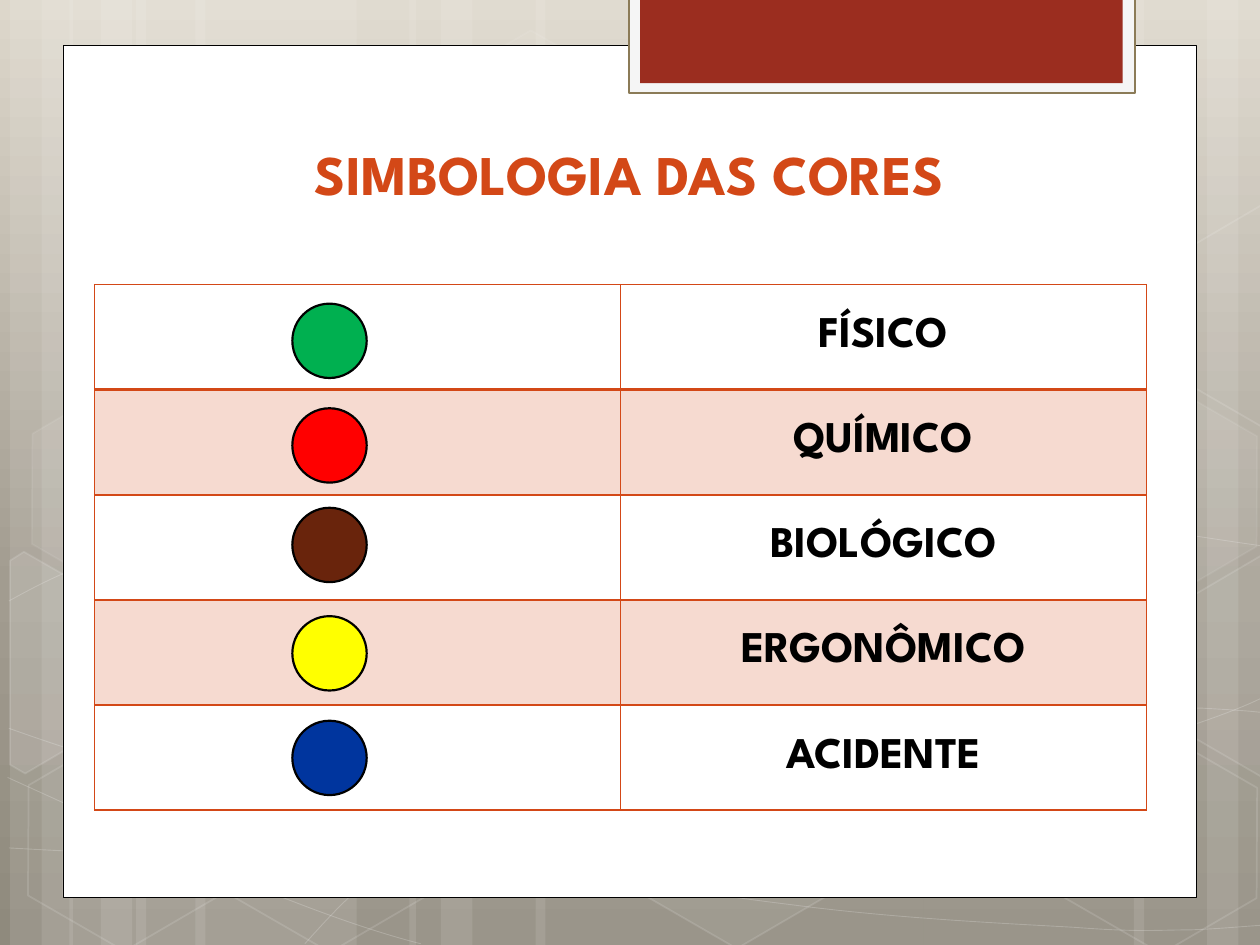
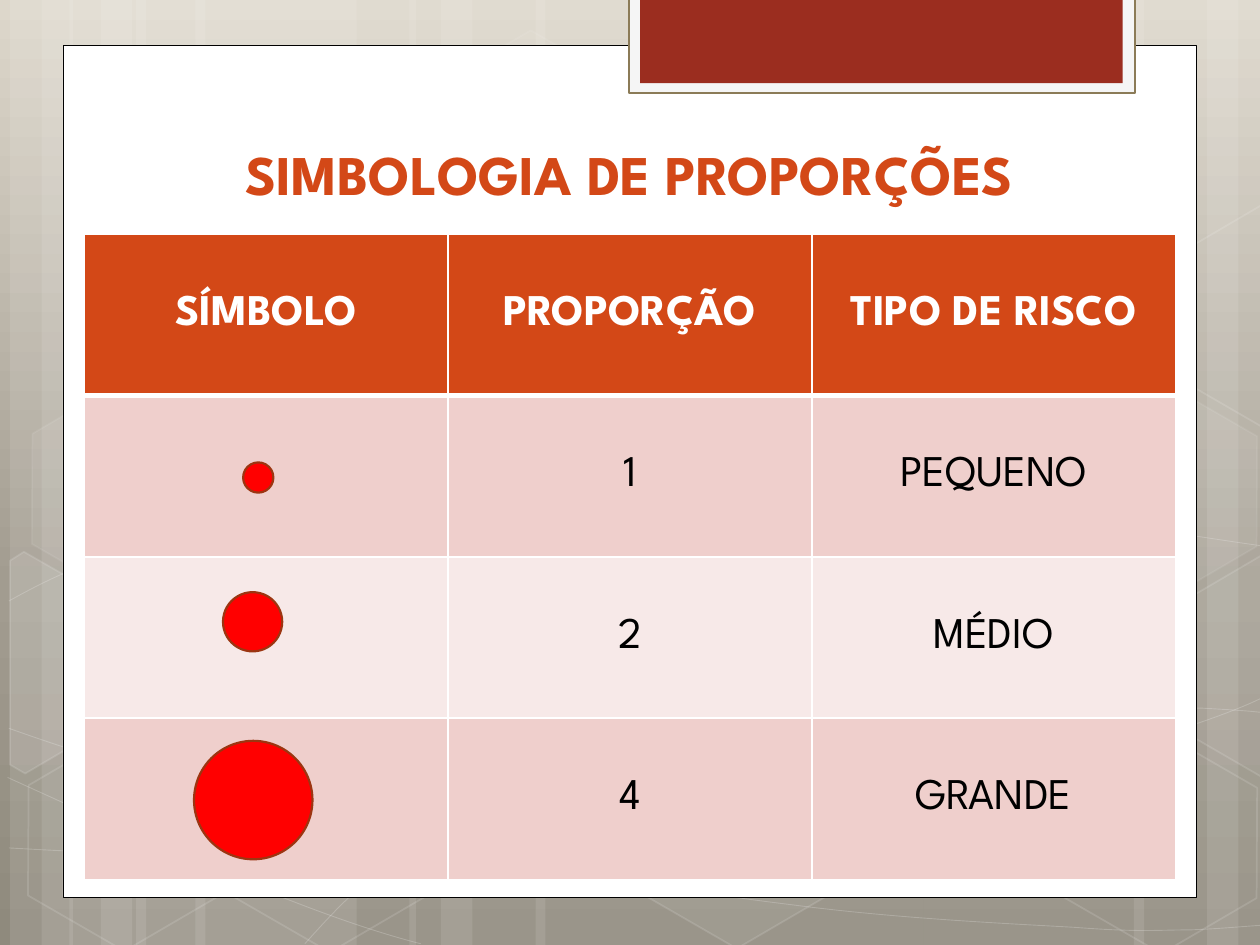
from dataclasses import dataclass
from typing import NamedTuple

from lxml import etree
from pptx import Presentation
from pptx.dml.color import RGBColor
from pptx.enum.shapes import MSO_SHAPE
from pptx.enum.text import MSO_ANCHOR, PP_ALIGN
from pptx.oxml import parse_xml
from pptx.oxml.ns import nsdecls, qn
from pptx.util import Inches, Pt

RECT, OVAL, HEXAGON = MSO_SHAPE.RECTANGLE, MSO_SHAPE.OVAL, MSO_SHAPE.HEXAGON
MIDDLE, BOTTOM = MSO_ANCHOR.MIDDLE, MSO_ANCHOR.BOTTOM
CENTER = PP_ALIGN.CENTER

FONT = "League Spartan"
COLORS = {
    "white": "FFFFFF", "black": "000000", "accent": "D34817",
    "tab": "9B2D1F", "tab_frame": "F5F5F5", "tab_edge": "8B7B57",
    "green": "00B050", "red": "FF0000", "brown": "69240C",
    "yellow": "FFFF00", "blue": "00359E", "dot_edge": "9C3511",
    "band_dark": "EFCFCC", "band_light": "F7E9E8",
}
BACKGROUND_STOPS = [(0, "DDD7CB"), (62, "A29C90"), (100, "8F8A7D")]

Point = tuple[float, float]


class Paint(NamedTuple):
    color: str
    alpha: int = 100


class Stroke(NamedTuple):
    color: str
    width: float
    alpha: int = 100


class Hexagon(NamedTuple):
    left: float
    top: float
    fill_alpha: int
    line_alpha: int


class Fragment(NamedTuple):
    """A hexagon cut off by the slide edge."""
    points: list[Point]
    fill_alpha: int


class Dot(NamedTuple):
    left: float
    top: float
    diameter: float
    color: str


@dataclass
class Grid:
    left: float
    top: float
    width: float
    height: float
    rows: list[list[str]]
    fills: list[Paint | None]
    border: str
    header_rule: float
    header_color: str
    bold_body: bool


# left, width
STRIPES = [(1.08, 1.75), (0.08, 0.5), (0.33, 0.83), (1.55, 1.75), (0.55, 0.5),
           (0.8, 0.83), (7.33, 1.75), (9.58, 0.5), (9, 0.83), (4.25, 3.08),
           (3.25, 0.5), (3.5, 0.83)]

# Each curve: a start point, then three Bezier points per segment
CURVES: list[list[Point]] = [
    [(0.07, 6.73), (0.61, 6.76), (1.15, 6.79), (1.9, 6.78), (2.65, 6.77),
     (3.58, 6.75), (4.58, 6.65), (5.58, 6.55), (7, 6.36), (7.92, 6.17),
     (8.83, 5.98), (9.77, 5.68), (10.07, 5.51)],
    [(0.07, 4.77), (0.36, 4.61), (0.65, 4.46), (1.21, 4.31), (1.78, 4.16),
     (2.59, 3.94), (3.47, 3.87), (4.36, 3.8), (5.44, 3.79), (6.54, 3.87),
     (7.64, 3.95), (9.47, 4.26), (10.07, 4.34)],
    [(0.06, 6.17), (1.27, 6.72), (2.47, 7.27), (3.34, 7.49)],
    [(0.07, 5.78), (0.38, 5.89), (0.7, 6), (1.28, 6.16), (1.86, 6.31),
     (2.73, 6.56), (3.57, 6.73), (4.4, 6.9), (5.45, 7.08), (6.28, 7.18),
     (7.11, 7.29), (8, 7.33), (8.53, 7.36), (9.05, 7.4), (9.19, 7.38),
     (9.45, 7.38), (9.71, 7.37), (9.89, 7.35), (10.07, 7.34)],
    [(2.42, 7.49), (2.6, 7.29), (2.78, 7.09), (3.02, 6.91), (3.26, 6.73),
     (3.6, 6.53), (3.88, 6.39), (4.16, 6.25), (4.33, 6.19), (4.7, 6.09),
     (5.06, 5.99), (5.73, 5.85), (6.08, 5.78), (6.44, 5.71), (6.49, 5.71),
     (6.8, 5.69), (7.11, 5.66), (7.6, 5.63), (7.94, 5.62), (8.29, 5.61),
     (8.86, 5.62), (8.86, 5.62), (8.86, 5.62), (9.53, 5.62), (9.53, 5.62),
     (9.71, 5.63), (9.88, 5.64), (9.97, 5.65), (10.06, 5.66), (10.03, 5.65),
     (10.06, 5.66)],
]

HEXAGONS = [
    Hexagon(3.34, 0.36, 4, 8), Hexagon(4.97, 5.89, 6, 12),
    Hexagon(0.11, 5.91, 0, 12), Hexagon(0.14, 3.12, 7, 8),
    Hexagon(1.74, 5.92, 0, 12), Hexagon(7.53, 4.53, 10, 12),
    Hexagon(8.34, 5.93, 0, 12), Hexagon(8.34, 3.14, 7, 8),
]

FRAGMENTS = [
    Fragment([(0.08, 4.45), (0.19, 4.38), (0.96, 4.82), (0.95, 5.7),
              (0.2, 6.14), (0.08, 6.07)], 10),
    Fragment([(9.26, 4.85), (10.01, 4.41), (10.09, 4.46), (10.09, 6.13),
              (10.02, 6.17), (9.26, 5.73)], 4),
    Fragment([(9.26, 2.07), (10.01, 1.63), (10.1, 1.68), (10.09, 3.35),
              (10.02, 3.39), (9.26, 2.95)], 0),
]

TINT = Paint("accent", 20)
COLOR_GRID = Grid(
    0.75, 2.26, 8.35, 4.17,
    [["", risk] for risk in
     ("FÍSICO", "QUÍMICO", "BIOLÓGICO", "ERGONÔMICO", "ACIDENTE")],
    [None, TINT, None, TINT, None], "accent", 2, "black", True)
COLOR_DOTS = [Dot(2.32, top, 0.59, color) for top, color in
              [(2.41, "green"), (3.24, "red"), (4.03, "brown"),
               (4.89, "yellow"), (5.72, "blue")]]

SIZE_GRID = Grid(
    0.67, 1.86, 8.66, 5.12,
    [["SÍMBOLO", "PROPORÇÃO", "TIPO DE RISCO"],
     ["", "1", "PEQUENO"], ["", "2", "MÉDIO"], ["", "4", "GRANDE"]],
    [Paint("accent"), Paint("band_dark"), Paint("band_light"),
     Paint("band_dark")], "white", 3, "white", False)
SIZE_DOTS = [Dot(1.93, 3.67, 0.24, "red"), Dot(1.77, 4.7, 0.47, "red"),
             Dot(1.54, 5.88, 0.94, "red")]


def rgb(name: str) -> RGBColor:
    return RGBColor.from_string(COLORS[name])


def apply_fill(fill, paint: Paint | None) -> None:
    if paint is None or paint.alpha == 0:
        fill.background()
        return
    fill.solid()
    fill.fore_color.rgb = rgb(paint.color)
    if paint.alpha < 100:
        clr = fill._xPr.find(f"{qn('a:solidFill')}/{qn('a:srgbClr')}")
        etree.SubElement(clr, qn("a:alpha"), val=str(paint.alpha * 1000))


def style(sp, paint: Paint | None, stroke: Stroke | None = None):
    sp.shadow.inherit = False
    apply_fill(sp.fill, paint)
    if stroke:
        sp.line.width = Pt(stroke.width)
        apply_fill(sp.line.fill, Paint(stroke.color, stroke.alpha))
    else:
        sp.line.fill.background()
    return sp


def add_preset(s, kind, left: float, top: float, width: float, height: float,
               paint: Paint | None, stroke: Stroke | None = None):
    sp = s.shapes.add_shape(kind, Inches(left), Inches(top),
                            Inches(width), Inches(height))
    return style(sp, paint, stroke)


def add_outline(s, points: list[Point], closed: bool,
                paint: Paint | None, stroke: Stroke):
    pts = [(Inches(x), Inches(y)) for x, y in points]
    builder = s.shapes.build_freeform(*pts[0])
    builder.add_line_segments(pts[1:], close=closed)
    return style(builder.convert_to_shape(), paint, stroke)


def bend(sp) -> None:
    """Turn each three line segments of an outline into one Bezier segment."""
    lines = list(sp._element.iter(qn("a:lnTo")))
    for i in range(0, len(lines), 3):
        segment = etree.Element(qn("a:cubicBezTo"))
        lines[i].addprevious(segment)
        for line in lines[i:i + 3]:
            segment.append(line[0])
            line.getparent().remove(line)


def write(tf, text: str, *, size: float, color: str, bold: bool = False) -> None:
    p = tf.paragraphs[0]
    p.alignment = CENTER
    r = p.add_run()
    r.text = text
    r.font.name = FONT
    r.font.size = Pt(size)
    r.font.bold = bold
    r.font.color.rgb = rgb(color)


def set_background(s) -> None:
    stops = "".join(
        f'<a:gs pos="{pos * 1000}"><a:srgbClr val="{color}"/></a:gs>'
        for pos, color in BACKGROUND_STOPS)
    s._element.cSld.insert(0, parse_xml(
        f'<p:bg {nsdecls("p", "a")}><p:bgPr><a:gradFill rotWithShape="1">'
        f'<a:gsLst>{stops}</a:gsLst><a:lin ang="5400000" scaled="0"/>'
        f'</a:gradFill><a:effectLst/></p:bgPr></p:bg>'))


def draw_backdrop(s) -> None:
    set_background(s)
    for left, width in STRIPES:
        add_preset(s, RECT, left, 0, width, 7.5, Paint("white", 10))
    for curve in CURVES:
        bend(add_outline(s, curve, False, None, Stroke("white", 0.5, 20)))
    for h in HEXAGONS:
        sp = add_preset(s, HEXAGON, h.left, h.top, 1.75, 1.52,
                        Paint("white", h.fill_alpha),
                        Stroke("white", 1, h.line_alpha))
        sp.adjustments[0] = 0.285
        sp.rotation = 30
    for f in FRAGMENTS:
        add_outline(s, f.points, True, Paint("white", f.fill_alpha),
                    Stroke("white", 1, 12))
    add_preset(s, RECT, 0.5, 0.36, 9, 6.76, Paint("white"), Stroke("black", 0.5))
    add_preset(s, RECT, 4.99, -0.02, 4.02, 0.76, Paint("tab_frame"),
               Stroke("tab_edge", 1.25))
    add_preset(s, RECT, 5.08, -0.02, 3.83, 0.68, Paint("tab"))


def add_titled_slide(prs, title: str):
    s = prs.slides.add_slide(prs.slide_layouts[6])
    draw_backdrop(s)
    tf = s.shapes.add_textbox(Inches(0.51), Inches(0.44),
                              Inches(8.98), Inches(1.25)).text_frame
    tf.word_wrap = True
    tf.vertical_anchor = BOTTOM
    write(tf, title, size=32, color="accent", bold=True)
    return s


def set_borders(cell, color: str, widths: dict[str, float]) -> None:
    tc_pr = cell._tc.get_or_add_tcPr()
    for side, width in widths.items():
        tc_pr.append(parse_xml(
            f'<a:ln{side} {nsdecls("a")} w="{Pt(width)}"><a:solidFill>'
            f'<a:srgbClr val="{COLORS[color]}"/></a:solidFill></a:ln{side}>'))


def add_grid(s, g: Grid) -> None:
    n_rows, n_cols = len(g.rows), len(g.rows[0])
    table = s.shapes.add_table(n_rows, n_cols, Inches(g.left), Inches(g.top),
                               Inches(g.width), Inches(g.height)).table
    table.first_row = table.horz_banding = False
    for i, (texts, paint) in enumerate(zip(g.rows, g.fills)):
        for j, text in enumerate(texts):
            cell = table.cell(i, j)
            cell.vertical_anchor = MIDDLE
            set_borders(cell, g.border, {
                "L": 1, "R": 1,
                "T": g.header_rule if i == 1 else 1,
                "B": g.header_rule if i == 0 else 1})
            apply_fill(cell.fill, paint)
            if text:
                write(cell.text_frame, text, size=25,
                      color="black" if i else g.header_color,
                      bold=i == 0 or g.bold_body)


def add_dots(s, dots: list[Dot], edge: str) -> None:
    for d in dots:
        add_preset(s, OVAL, d.left, d.top, d.diameter, d.diameter,
                   Paint(d.color), Stroke(edge, 1.25))


def main() -> None:
    prs = Presentation()
    prs.slide_width, prs.slide_height = Inches(10), Inches(7.5)
    for title, grid, dots, edge in [
        ("SIMBOLOGIA DAS CORES", COLOR_GRID, COLOR_DOTS, "black"),
        ("SIMBOLOGIA DE PROPORÇÕES", SIZE_GRID, SIZE_DOTS, "dot_edge"),
    ]:
        s = add_titled_slide(prs, title)
        add_grid(s, grid)
        add_dots(s, dots, edge)
    prs.save("out.pptx")


if __name__ == "__main__":
    main()
